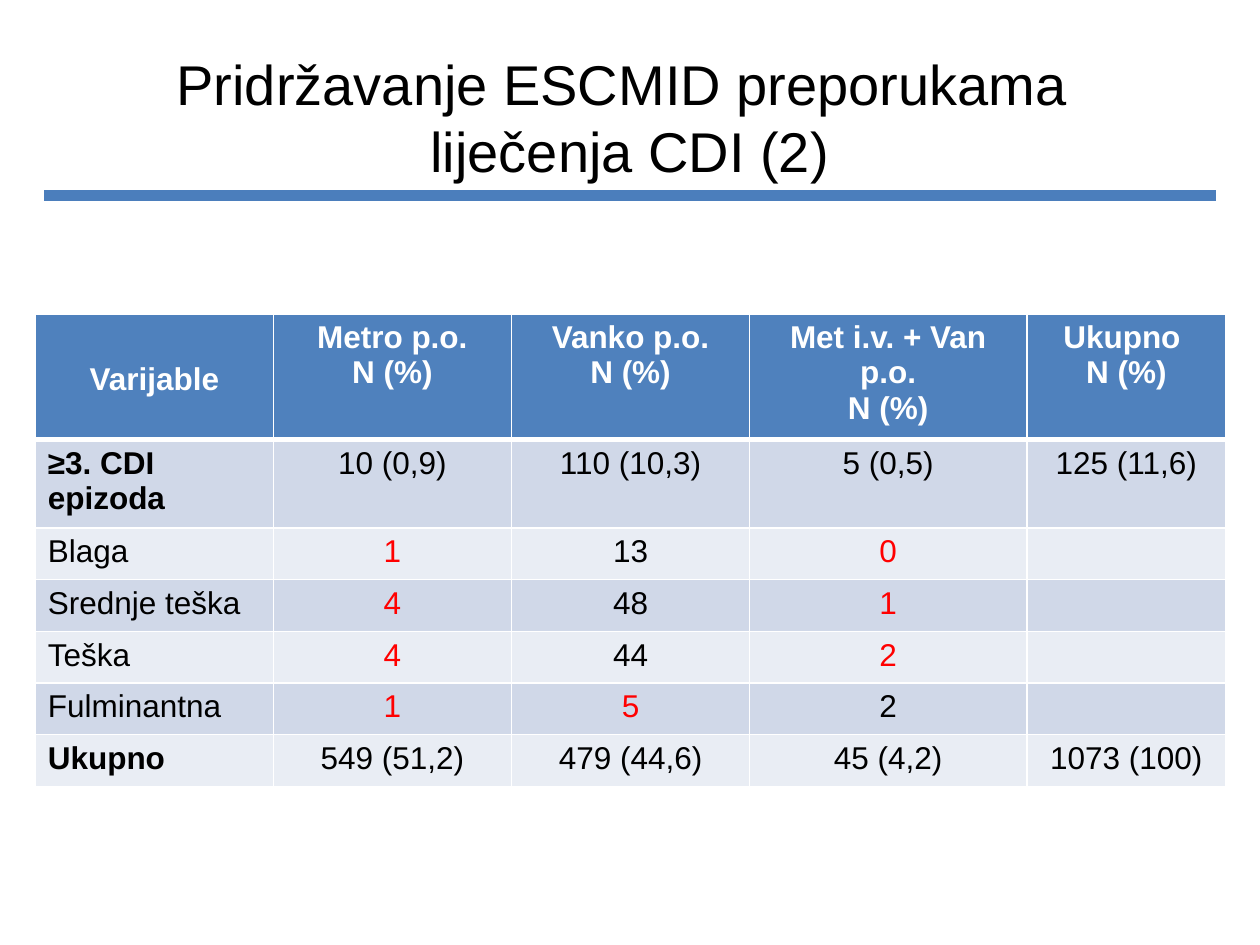
import pptx
import pptx.util
import pptx.dml.color
import pptx.enum.shapes
import pptx.enum.text
import pptx.oxml.ns
from dataclasses import dataclass
from lxml import etree
from pptx.util import Inches

ALIGN = pptx.enum.text.PP_ALIGN
ANCHOR = pptx.enum.text.MSO_ANCHOR


@dataclass(frozen=True)
class Theme:
    font: str = "Arial"
    title_size: int = 32
    table_size: int = 18
    text: str = "000000"
    white: str = "FFFFFF"
    highlight: str = "FF0000"
    rule: str = "4B7EBC"
    header: str = "4F81BD"
    bands: tuple = ("D0D8E8", "E9EDF4")
    rule_width: int = 6
    border: int = 1
    header_border: int = 3


def rgb(color):
    return pptx.dml.color.RGBColor.from_string(color)


class SlideBuilder:
    def __init__(self, page, theme):
        self.page = page
        self.theme = theme

    def style(self, para, size, color, bold=False, align=ALIGN.CENTER):
        para.alignment = align
        para.font.name = self.theme.font
        para.font.size = pptx.util.Pt(size)
        para.font.bold = bold
        para.font.color.rgb = rgb(color)

    def rule(self, left, right, y):
        line = self.page.shapes.add_connector(
            pptx.enum.shapes.MSO_CONNECTOR.STRAIGHT,
            Inches(left), Inches(y), Inches(right), Inches(y))
        line.line.color.rgb = rgb(self.theme.rule)
        line.line.width = pptx.util.Pt(self.theme.rule_width)
        etree.SubElement(line._element.spPr, pptx.oxml.ns.qn("a:effectLst"))

    def title(self, text, left, top, width, height):
        box = self.page.shapes.add_textbox(
            Inches(left), Inches(top), Inches(width), Inches(height))
        frame = box.text_frame
        frame.word_wrap = True
        frame.vertical_anchor = ANCHOR.MIDDLE
        para = frame.paragraphs[0]
        para.text = text
        self.style(para, self.theme.title_size, self.theme.text)

    def borders(self, cell, top, bottom):
        sides = {"L": self.theme.border, "R": self.theme.border, "T": top, "B": bottom}
        properties = cell._tc.get_or_add_tcPr()
        qn = pptx.oxml.ns.qn
        for side, width in sides.items():
            line = etree.SubElement(properties, qn(f"a:ln{side}"), w=str(pptx.util.Pt(width)))
            fill = etree.SubElement(line, qn("a:solidFill"))
            etree.SubElement(fill, qn("a:srgbClr"), val=self.theme.white)

    def cell(self, cell, text, fill, color, bold, align):
        cell.fill.solid()
        cell.fill.fore_color.rgb = rgb(fill)
        cell.text = text
        for para in cell.text_frame.paragraphs:
            self.style(para, self.theme.table_size, color, bold, align)

    def table(self, rows, widths, row_height, left, top, highlighted, bold_labels):
        theme = self.theme
        table = self.page.shapes.add_table(
            len(rows), len(widths), Inches(left), Inches(top),
            Inches(sum(widths)), Inches(row_height * len(rows))).table
        table.horz_banding = False
        for column, width in zip(table.columns, widths):
            column.width = Inches(width)
        for r, values in enumerate(rows):
            table.rows[r].height = Inches(row_height)
            is_header = r == 0
            fill = theme.header if is_header else theme.bands[(r - 1) % 2]
            for c, text in enumerate(values):
                if is_header:
                    color = theme.white
                else:
                    color = theme.highlight if (r, c) in highlighted else theme.text
                bold = is_header or (c == 0 and r in bold_labels)
                align = ALIGN.LEFT if c == 0 and not is_header else ALIGN.CENTER
                cell = table.cell(r, c)
                self.borders(cell,
                             top=theme.header_border if r == 1 else theme.border,
                             bottom=theme.header_border if is_header else theme.border)
                self.cell(cell, text, fill, color, bold, align)
        return table


ROWS = [
    ["Varijable", "Metro p.o.\nN (%)", "Vanko p.o.\nN (%)",
     "Met i.v. + Van p.o.\nN (%)", "Ukupno \nN (%)"],
    ["≥3. CDI epizoda", "10 (0,9)", "110 (10,3)", "5 (0,5)", "125 (11,6)"],
    ["Blaga", "1", "13", "0", ""],
    ["Srednje teška", "4", "48", "1", ""],
    ["Teška", "4", "44", "2", ""],
    ["Fulminantna", "1", "5", "2", ""],
    ["Ukupno", "549 (51,2)", "479 (44,6)", "45 (4,2)", "1073 (100)"],
]
HIGHLIGHTED = {(2, 1), (2, 3), (3, 1), (3, 3), (4, 1), (4, 3), (5, 1), (5, 2)}


def main():
    deck = pptx.Presentation()
    deck.slide_width, deck.slide_height = Inches(10), Inches(7.5)
    page = deck.slides.add_slide(deck.slide_layouts[6])
    builder = SlideBuilder(page, Theme())

    # Title and the rule below it
    builder.rule(0.35, 9.65, 1.55)
    builder.title("Pridržavanje ESCMID preporukama \vliječenja CDI (2)", 0.5, 0.3, 9, 1.25)

    # Treatment by severity
    table = builder.table(ROWS, [1.89, 1.89, 1.89, 2.2, 1.58], 0.41, 0.28, 2.49,
                          HIGHLIGHTED, bold_labels={1, 6})
    corner = table.cell(0, 0)
    corner.vertical_anchor = ANCHOR.MIDDLE
    corner.margin_top = Inches(0.1)

    deck.save("out.pptx")


if __name__ == "__main__":
    main()
